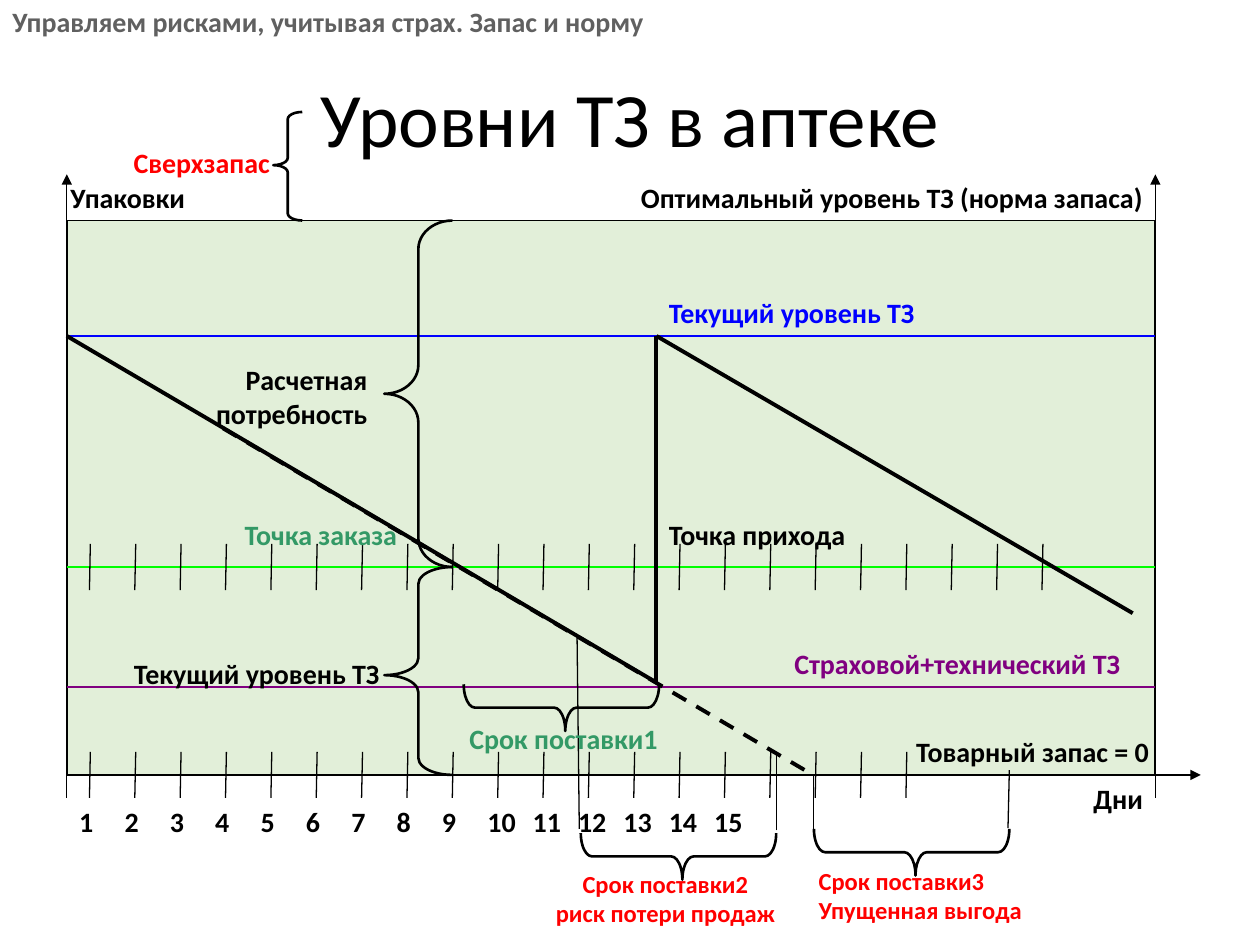
"""Build the slide on stock levels in a pharmacy."""
from lxml import etree
from pptx import Presentation
from pptx.dml.color import RGBColor
from pptx.enum.dml import MSO_LINE
from pptx.enum.shapes import MSO_CONNECTOR, MSO_SHAPE
from pptx.enum.text import MSO_ANCHOR, PP_ALIGN
from pptx.oxml.ns import qn
from pptx.util import Inches, Pt

BLACK = RGBColor(0x00, 0x00, 0x00)
GRAY = RGBColor(0x60, 0x60, 0x60)
RED = RGBColor(0xFF, 0x00, 0x00)
BLUE = RGBColor(0x00, 0x00, 0xFF)
LIME = RGBColor(0x00, 0xFF, 0x00)
GREEN = RGBColor(0x33, 0x99, 0x66)
PURPLE = RGBColor(0x80, 0x00, 0x80)
PALE = RGBColor(0xE2, 0xEF, 0xD9)
LEFT, RIGHT, CENTER = PP_ALIGN.LEFT, PP_ALIGN.RIGHT, PP_ALIGN.CENTER
STRAIGHT = MSO_CONNECTOR.STRAIGHT
RECT, BRACE = MSO_SHAPE.RECTANGLE, MSO_SHAPE.RIGHT_BRACE

COLS, ROWS = 24, 12
X0, Y0 = Inches(0.53), Inches(1.75)
CW, RH = Inches(8.64) / COLS, Inches(4.4) / ROWS

prs = Presentation()
prs.slide_width, prs.slide_height = Inches(10), Inches(7.5)
s = prs.slides.add_slide(prs.slide_layouts[6])


def add_line(c1, r1, c2, r2, color=BLACK, width=0.75, arrow=False):
    ln = s.shapes.add_connector(STRAIGHT, int(X0 + c1 * CW), int(Y0 + r1 * RH),
                                int(X0 + c2 * CW), int(Y0 + r2 * RH))
    ln.line.color.rgb = color
    ln.line.width = Pt(width)
    if arrow:
        etree.SubElement(ln.line._get_or_add_ln(), qn("a:tailEnd"), type="triangle")
    etree.SubElement(ln._element.spPr, qn("a:effectLst"))
    return ln


def add_text(c, r, w, lines, color=BLACK, align=LEFT, size=16, bold=True, h=1):
    sp = s.shapes.add_textbox(int(X0 + c * CW), int(Y0 + r * RH), int(w * CW), int(h * RH))
    tf = sp.text_frame
    tf.word_wrap = True
    for i, line in enumerate(lines.split("\n")):
        p = tf.paragraphs[0] if i == 0 else tf.add_paragraph()
        p.alignment = align
        run = p.add_run()
        run.text = line
        run.font.name = "Calibri"
        run.font.size = Pt(size)
        run.font.bold = bold
        run.font.color.rgb = color
    return tf


tf = add_text(-0.08, -3.95, 25, "Уровни ТЗ в аптеке", BLACK, CENTER, 44, False, 3.4)
tf.vertical_anchor = MSO_ANCHOR.MIDDLE

sp = s.shapes.add_shape(RECT, X0, Y0, int(COLS * CW), int(ROWS * RH))
sp.shadow.inherit = False
sp.fill.solid()
sp.fill.fore_color.rgb = PALE
sp.line.color.rgb = BLACK
sp.line.width = Pt(1)

for r, color, width in [(0, BLACK, 0.75), (2.5, BLUE, 1), (7.5, LIME, 0.75), (10.1, PURPLE, 0.75)]:
    add_line(0, r, COLS, r, color, width)

for r, count in [(7, 22), (11.5, 19)]:
    for i in range(count):
        add_line(i + 0.5, r + 1, i + 0.52, r)

for c in (0, COLS):
    add_line(c, ROWS + 0.5, c, -1, arrow=True)
add_line(0, ROWS, COLS + 1, ROWS, arrow=True)

for ends in [(0, 2.5, 13, 10), (13, 2.5, 13, 10), (13, 2.5, 23.5, 8.5)]:
    add_line(*ends, width=2.25)
ln = add_line(3.45, 4.5, 16.45, 12, width=2.25)
ln.line.dash_style = MSO_LINE.DASH

for ends in [(11.3, 13.17, 11.25, 9.03), (15.65, 13.2, 15.65, 11.5),
             (16.47, 13.2, 16.47, 12), (20.75, 13.15, 20.78, 11.9)]:
    add_line(*ends)

braces = [
    (7, 0, 1.5, 7.5, 180, 0.42, 0.5),
    (7, 7.5, 1.5, 4.5, 180, 0.25, 0.48),
    (4.55, -2.35, 0.64, 2.35, 180, 0.25, 0.51),
    (10.39, 8.43, 1.03, 4.23, 90, 0.24, 0.48),
    (12.97, 11.65, 1.03, 4.23, 90, 0.24, 0.48),
    (18.11, 11.56, 1.03, 4.23, 90, 0.24, 0.48),
]
for c, r, w, h, angle, bend, tip in braces:
    sp = s.shapes.add_shape(BRACE, int(X0 + c * CW), int(Y0 + r * RH), int(w * CW), int(h * RH))
    sp.shadow.inherit = False
    sp.rotation = angle
    sp.adjustments[0], sp.adjustments[1] = bend, tip
    sp.fill.background()
    sp.line.color.rgb = BLACK
    sp.line.width = Pt(1.5)

for day in range(1, 16):
    add_text(day - 1, 12.5, 1 if day < 10 else 1.5, str(day))

labels = [
    (-1.6, -4.8, 14.6, "Управляем рисками, учитывая страх. Запас и норму", GRAY, RIGHT),
    (-0.4, -1, 3.28, "Упаковки", BLACK, RIGHT),
    (1, -1.75, 3.75, "Сверхзапас", RED, RIGHT),
    (11.5, -1, 12.5, "Оптимальный уровень ТЗ (норма запаса)", BLACK, RIGHT),
    (13, 1.5, 10.5, "Текущий уровень ТЗ", BLUE, LEFT),
    (0.4, 2.95, 6.5, "Расчетная\nпотребность", BLACK, RIGHT),
    (3.65, 6.3, 4.2, "Точка заказа", GREEN, LEFT),
    (13, 6.3, 6, "Точка прихода", BLACK, LEFT),
    (0.17, 9.3, 7, "Текущий уровень ТЗ", BLACK, RIGHT),
    (13, 9.08, 10.5, "Страховой+технический ТЗ", PURPLE, RIGHT),
    (8.6, 10.7, 4.8, "Срок поставки1", GREEN, LEFT),
    (18.45, 11, 6.5, "Товарный запас = 0", BLACK, LEFT),
    (19, 12, 5, "Дни", BLACK, RIGHT),
]
for label in labels:
    add_text(*label)
add_text(10.2, 13.9, 6, "Срок поставки2\nриск потери продаж", RED, CENTER, 14)
add_text(16.3, 13.83, 6.3, "Срок поставки3\nУпущенная выгода", RED, LEFT, 14)

prs.save("out.pptx")
